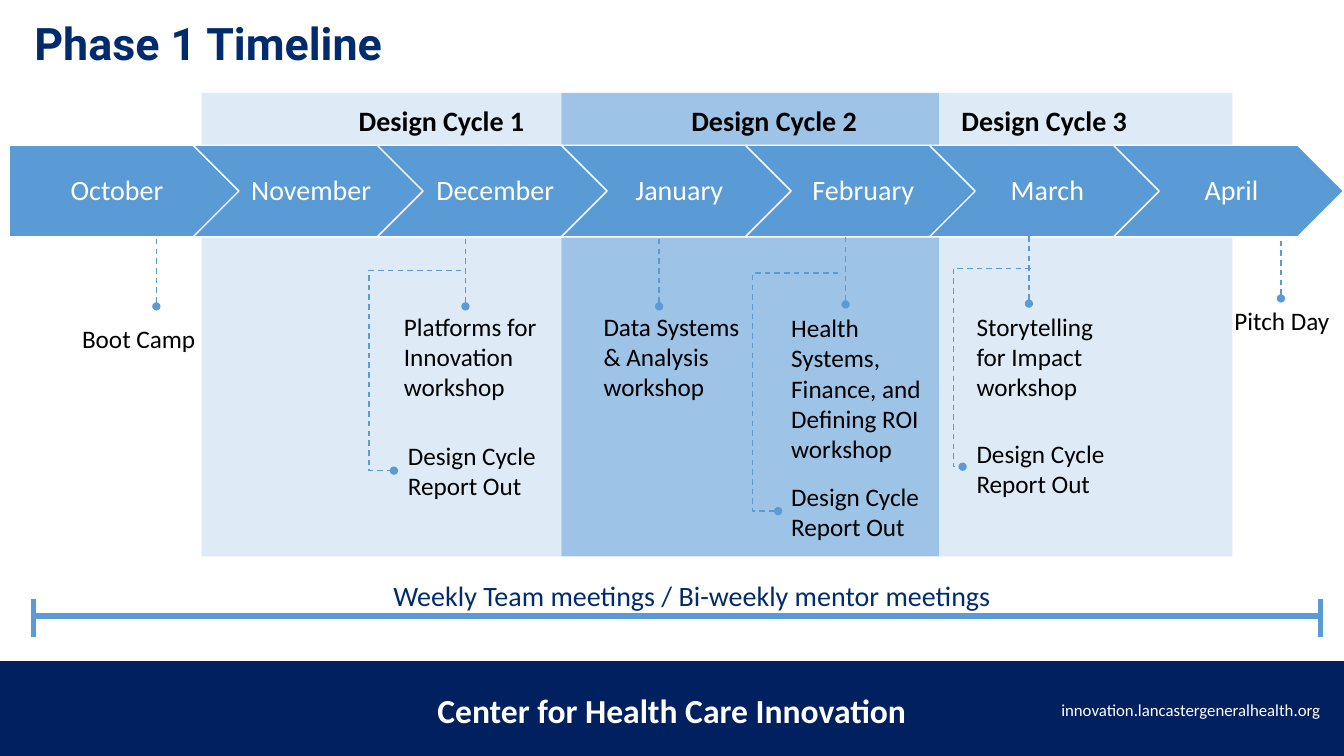
from dataclasses import dataclass

import lxml.etree
import pptx
import pptx.dml.color
import pptx.enum.dml
import pptx.enum.shapes
import pptx.enum.text
import pptx.oxml.ns
import pptx.util

Cm = pptx.util.Cm
Pt = pptx.util.Pt
Align = pptx.enum.text.PP_ALIGN
Anchor = pptx.enum.text.MSO_ANCHOR
Preset = pptx.enum.shapes.MSO_SHAPE
Link = pptx.enum.shapes.MSO_CONNECTOR
qn = pptx.oxml.ns.qn


@dataclass(frozen=True)
class Theme:
    body: str = "Calibri"
    heading: str = "Roboto"
    white: str = "FFFFFF"
    black: str = "000000"
    navy: str = "002060"
    ink: str = "002C6E"
    blue: str = "5B9BD5"
    pale: str = "DEEBF7"
    mid: str = "9DC3E6"
    title: int = 32
    banner: int = 24
    label: int = 20
    event: int = 18
    address: int = 12


@dataclass(frozen=True)
class Box:
    left: float
    top: float
    width: float
    height: float

    def inner(self, x, y, width, height):
        return Box(self.left + x, self.top + y, width, height)

    def point(self, x, y):
        return self.left + x, self.top + y

    def lengths(self):
        return [Cm(v) for v in (self.left, self.top, self.width, self.height)]


THEME = Theme()


def rgb(value):
    return pptx.dml.color.RGBColor.from_string(value)


def write(holder, text, size=THEME.event, color=THEME.black, font=THEME.body, bold=False,
          align=Align.LEFT, anchor=Anchor.TOP, spacing=None, insets=None):
    frame = holder.text_frame
    frame.word_wrap = True
    frame.auto_size = pptx.enum.text.MSO_AUTO_SIZE.NONE
    frame.vertical_anchor = anchor
    if insets:
        frame.margin_left, frame.margin_top, frame.margin_right, frame.margin_bottom = map(Cm, insets)
    paragraph = frame.paragraphs[0]
    paragraph.alignment = align
    paragraph.line_spacing = spacing
    run = paragraph.add_run()
    run.text = text
    run.font.name, run.font.size, run.font.bold = font, Pt(size), bold
    run.font.color.rgb = rgb(color)


def add_text(slide, box, text, **style):
    write(slide.shapes.add_textbox(*box.lengths()), text, **style)


def add_block(slide, box, fill, preset=Preset.RECTANGLE, outline=None):
    block = slide.shapes.add_shape(preset, *box.lengths())
    block.shadow.inherit = False
    block.fill.solid()
    block.fill.fore_color.rgb = rgb(fill)
    if outline:
        block.line.color.rgb = rgb(outline)
        block.line.width = Pt(1)
    else:
        block.line.fill.background()
    return block


def add_line(slide, start, end, width=1, dashed=False, dot=None, kind=Link.STRAIGHT):
    line = slide.shapes.add_connector(kind, *[Cm(v) for v in (*start, *end)])
    line.line.color.rgb = rgb(THEME.blue)
    line.line.width = Pt(width)
    if dashed:
        line.line.dash_style = pptx.enum.dml.MSO_LINE.DASH
    properties = line._element.spPr
    if dot:
        lxml.etree.SubElement(properties.find(qn("a:ln")), qn(f"a:{dot}"), type="oval")
    lxml.etree.SubElement(properties, qn("a:effectLst"))
    return line


def add_elbow(slide, start, turn, end):
    elbow = add_line(slide, start, end, dashed=True, dot="tailEnd", kind=Link.ELBOW)
    geometry = elbow._element.spPr.find(qn("a:prstGeom"))
    ratio = round((turn - start[0]) / (end[0] - start[0]) * 100000)
    lxml.etree.SubElement(geometry.find(qn("a:avLst")), qn("a:gd"), name="adj1", fmla=f"val {ratio}")


def footer(slide, box):
    add_block(slide, box, THEME.navy)
    add_text(slide, box.inner(10.54, 0.59, 12.78, 1.27), "Center for Health Care Innovation",
             size=THEME.banner, color=THEME.white, bold=True, align=Align.CENTER)
    add_text(slide, box.inner(24.21, 0.84, 9.32, 0.76), "innovation.lancastergeneralhealth.org",
             size=THEME.address, color=THEME.white, align=Align.RIGHT)


def title(slide, box):
    heading = slide.shapes.title
    heading.left, heading.top, heading.width, heading.height = box.lengths()
    write(heading, "Phase 1 Timeline", size=THEME.title, color=THEME.ink,
          font=THEME.heading, bold=True, spacing=0.9)


def cycles(slide, box):
    bands = [
        (0, 9.07, THEME.pale, 3.71, 5.2, Align.LEFT),
        (9.07, 9.52, THEME.mid, 10.29, 8.28, Align.CENTER),
        (18.59, 7.39, THEME.pale, 18.9, 4.9, Align.LEFT),
    ]
    for number, (x, width, fill, label_x, label_width, align) in enumerate(bands, 1):
        add_block(slide, box.inner(x, 0, width, box.height), fill)
        add_text(slide, box.inner(label_x, 0.15, label_width, 1.12), f"Design Cycle {number}",
                 size=THEME.label, bold=True, align=align)


def months(slide, box):
    names = ["October", "November", "December", "January", "February", "March", "April"]
    arrow_width = 5.8
    step = (box.width - arrow_width) / (len(names) - 1)
    for index, name in enumerate(names):
        preset = Preset.CHEVRON if index else Preset.PENTAGON
        arrow = add_block(slide, box.inner(index * step, 0, arrow_width, box.height),
                          THEME.blue, preset, THEME.white)
        write(arrow, name, size=THEME.label, color=THEME.white, align=Align.CENTER,
              anchor=Anchor.MIDDLE, spacing=0.9,
              insets=(0.23 if index else 0.3, 0.15, 0.08, 0.15))


def events(slide, box):
    stem, width = 1.78, 3.99
    workshops = [
        (3.94, 1.8, 1.5, 2.11, width, 1.02, Align.CENTER, "Boot Camp"),
        (11.73, 1.8, 9.93, 1.8, width, 2.57, Align.LEFT, "Platforms for Innovation workshop"),
        (16.61, 1.8, 14.96, 1.8, width, 2.57, Align.LEFT, "Data Systems & Analysis workshop"),
        (21.31, 1.75, 19.69, 1.83, width, 4.11, Align.LEFT,
         "Health Systems, Finance, and Defining ROI workshop"),
        (25.93, 1.73, 24.36, 1.8, width, 2.57, Align.LEFT, "Storytelling for Impact workshop"),
        (32.28, 1.6, 30.86, 1.65, 3, 1.02, Align.LEFT, "Pitch Day"),
    ]
    for stem_x, dot_y, x, y, text_width, height, align, text in workshops:
        add_line(slide, box.point(stem_x, dot_y), box.point(stem_x, dot_y - stem),
                 dashed=True, dot="headEnd")
        add_text(slide, box.inner(x, y, text_width, height), text, align=align)
    reports = [
        ((11.63, 0.89), 9.3, (9.93, 5.94), (10.03, 5.05)),
        ((21.13, 0.96), 18.97, (19.61, 6.96), (19.69, 6.09)),
        ((25.98, 0.84), 24.03, (24.26, 5.84), (24.36, 5)),
    ]
    for start, turn, end, corner in reports:
        add_elbow(slide, box.point(*start), box.left + turn, box.point(*end))
        add_text(slide, box.inner(*corner, width, 1.8), "Design Cycle Report Out")


def meetings(slide, box):
    caption = add_block(slide, box.inner(7.29, 0, 18.62, 0.91), THEME.white)
    write(caption, "Weekly Team meetings / Bi-weekly mentor meetings", size=THEME.label,
          color=THEME.ink, align=Align.CENTER, anchor=Anchor.MIDDLE,
          insets=(0.33, 0.18, 0.33, 0.18))
    add_line(slide, box.point(0, 0.97), box.point(box.width, 0.97), width=4)
    for x in (0, box.width):
        add_line(slide, box.point(x, 0.54), box.point(x, box.height), width=3.75)


def main():
    deck = pptx.Presentation()
    deck.slide_width, deck.slide_height = Cm(33.87), Cm(19.05)
    slide = deck.slides.add_slide(deck.slide_layouts[5])
    footer(slide, Box(0, 16.66, 33.87, 2.39))
    title(slide, Box(0.61, 0.43, 18.97, 2.29))
    cycles(slide, Box(5.08, 2.34, 25.98, 11.68))
    months(slide, Box(0.23, 3.66, 33.63, 2.31))
    events(slide, Box(0, 5.92, 33.87, 8.23))
    meetings(slide, Box(0.84, 14.55, 32.43, 1.5))
    deck.save("out.pptx")


if __name__ == "__main__":
    main()
